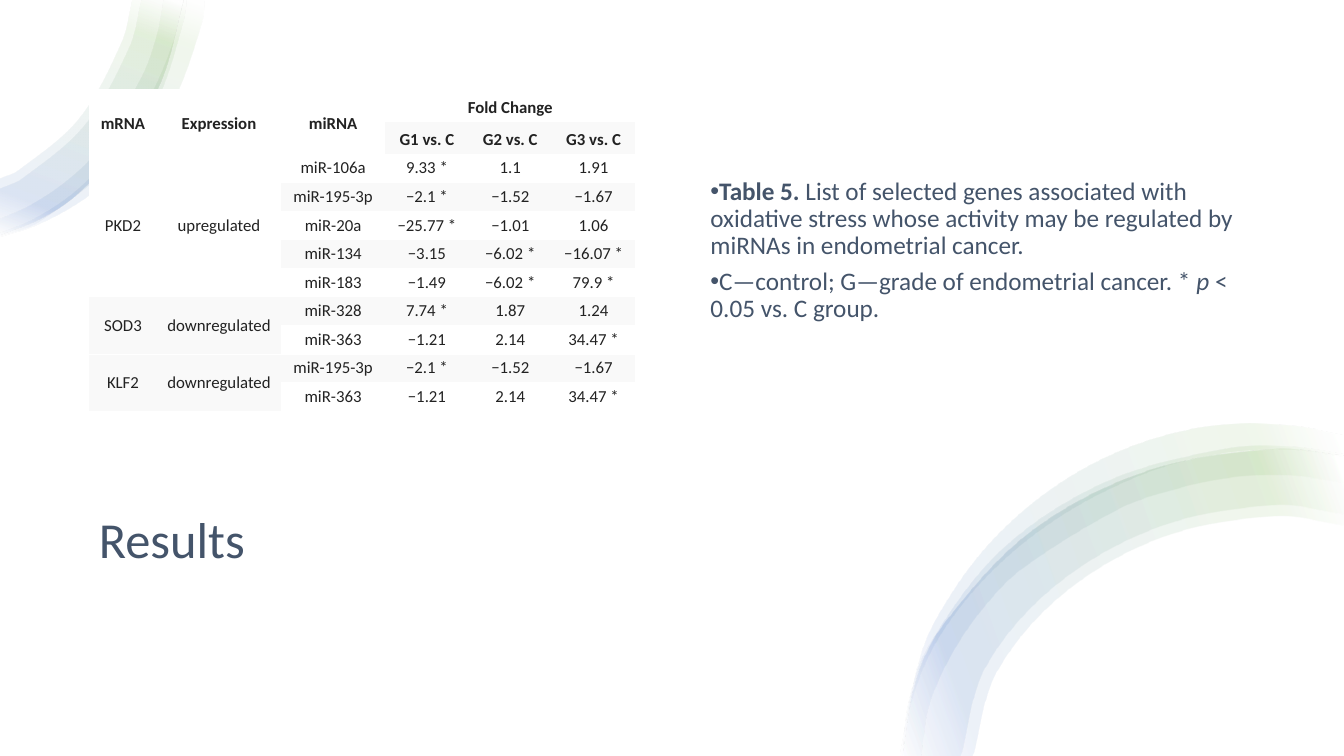
import math
import pptx
import pptx.dml.color
import pptx.enum.text
import pptx.enum.shapes
import pptx.oxml
import pptx.oxml.ns
import pptx.util

Cm, Pt = pptx.util.Cm, pptx.util.Pt
FONT = "Calibri"
SLATE, INK, WHITE, PALE = "44546A", "222222", "FFFFFF", "F9F9F9"
MIDDLE = pptx.enum.text.MSO_ANCHOR.MIDDLE
NAMESPACE = pptx.oxml.ns.nsdecls("a")


def colour(hex_code):
    return pptx.dml.color.RGBColor.from_string(hex_code)


def bezier_segments(knots):
    """Two control points and an end point for each step of a smooth curve."""
    ends = [knots[0], *knots, knots[-1]]
    segments = []
    for a, b, c, d in zip(ends, ends[1:], ends[2:], ends[3:]):
        reach = math.dist(b, c) / 3
        leave, arrive = reach / math.dist(a, c), reach / math.dist(b, d)
        segments.append([(b[0] + (c[0] - a[0]) * leave, b[1] + (c[1] - a[1]) * leave),
                         (c[0] - (d[0] - b[0]) * arrive, c[1] - (d[1] - b[1]) * arrive), c])
    return segments


deck = pptx.Presentation()
deck.slide_width, deck.slide_height = Cm(33.87), Cm(19.05)
slide = deck.slides.add_slide(deck.slide_layouts[1])

# Title
title = slide.shapes.title
title.left, title.top, title.width, title.height = Cm(2.24), Cm(11.79), Cm(29.39), Cm(3.76)
title.text_frame.text = "Results"
title.text_frame.vertical_anchor = MIDDLE
heading = title.text_frame.paragraphs[0]
heading.alignment = pptx.enum.text.PP_ALIGN.LEFT
heading.line_spacing = 0.9
heading.font.size, heading.font.name = Pt(36), FONT
heading.font.color.rgb = colour(SLATE)

# White backdrop behind everything
backdrop = slide.shapes.add_shape(pptx.enum.shapes.MSO_SHAPE.RECTANGLE, 0, 0,
                                  deck.slide_width, deck.slide_height)
backdrop.shadow.inherit = False
backdrop.fill.solid()
backdrop.fill.fore_color.rgb = colour(WHITE)
backdrop.line.fill.background()
title._element.addprevious(backdrop._element)

# Translucent rings in two corners: outer edge, inner edge (in units of 2.54 cm)
corner_edge = [(0, 2.33), (0.4, 2.17), (0.75, 1.94), (1.24, 1.42), (1.6, 0.8), (1.82, 0)]
corner_rings = [
    ([(0, 2.35), (0.35, 2.24), (0.77, 2.02), (1.15, 1.73), (1.49, 1.37), (1.75, 0.95),
      (2, 0.24), (2.03, 0)],
     [(1.82, 0), (1.72, 0.41), (1.55, 0.84), (1.33, 1.25), (1.04, 1.61), (0.71, 1.93),
      (0.32, 2.18), (0, 2.31)]),
    (corner_edge, [(1.31, 0), (1.2, 0.43), (0.78, 1.18), (0.18, 1.69), (0, 1.77)]),
    ([(0, 2.34), (0.37, 2.21), (1.1, 1.65), (1.38, 1.29), (1.61, 0.88), (1.82, 0.2),
      (1.85, 0)],
     [(1.62, 0), (1.55, 0.36), (1.4, 0.77), (0.95, 1.51), (0.64, 1.81), (0.29, 2.04),
      (0, 2.17)]),
    (corner_edge, [(1.4, 0), (1.28, 0.47), (0.84, 1.24), (0.22, 1.77), (0, 1.87)]),
]
sweep_edge = [(8.95, 7.5), (9.1, 6.7), (9.39, 6.15), (10.24, 5.26), (11.38, 4.67),
              (12.65, 4.45), (13.33, 4.52)]
sweep_rings = [
    (sweep_edge, [(13.33, 5.21), (12.65, 5.12), (11.55, 5.32), (10.57, 5.87),
                  (9.89, 6.66), (9.65, 7.5)]),
    (sweep_edge, [(13.33, 5.1), (12.65, 5.01), (11.51, 5.22), (10.49, 5.79),
                  (9.78, 6.61), (9.53, 7.5)]),
    ([(8.95, 7.5), (9.01, 6.98), (9.21, 6.41), (9.94, 5.45), (10.97, 4.78),
      (12.17, 4.45), (12.8, 4.43), (13.33, 4.51)],
     [(13.33, 4.79), (12.79, 4.72), (12.21, 4.74), (11.64, 4.86), (11.1, 5.05),
      (10.13, 5.65), (9.74, 6.05), (9.43, 6.51), (9.21, 7.02), (9.14, 7.5)]),
    ([(8.93, 7.5), (9.16, 6.44), (9.45, 5.88), (9.83, 5.38), (10.31, 4.94),
      (10.86, 4.59), (11.48, 4.34), (12.14, 4.21), (12.81, 4.22), (13.33, 4.32)],
     [(13.33, 4.53), (12.79, 4.46), (12.18, 4.49), (11.58, 4.62), (11.01, 4.85),
      (10.48, 5.15), (10, 5.52), (9.58, 5.96), (9.24, 6.47), (9.03, 7.04), (8.97, 7.5)]),
]
stops = "".join(
    f'<a:gs pos="{percent * 1000}"><a:srgbClr val="{tint}"><a:alpha val="10000"/>'
    '</a:srgbClr></a:gs>'
    for percent, tint in [(2, WHITE), (16, "70AD47"), (85, "4472C4"), (100, WHITE)])
for rings, angle in [(corner_rings, 110), (sweep_rings, 160)]:
    for outer, inner in rings:
        outline = [(round(x * 1000), round(y * 1000)) for x, y in outer + inner]
        left, top = (min(values) for values in zip(*outline))
        builder = slide.shapes.build_freeform(*outline[0], scale=Cm(2.54) / 1000)
        builder.add_line_segments(outline[1:], close=True)
        ring = builder.convert_to_shape()
        ring.shadow.inherit = False
        ring.line.fill.background()
        geometry = ring._element.spPr.find(pptx.oxml.ns.qn("a:custGeom"))
        # Bend both edges; the straight end between them stays a line
        sides = list(geometry.iter(pptx.oxml.ns.qn("a:lnTo")))
        split = len(outer)
        bends = (bezier_segments(outline[:split]) + [None]
                 + bezier_segments(outline[split:]))
        for side, bend in zip(sides, bends):
            if bend:
                points = "".join(f'<a:pt x="{round(x - left)}" y="{round(y - top)}"/>'
                                 for x, y in bend)
                side.getparent().replace(side, pptx.oxml.parse_xml(
                    f'<a:cubicBezTo {NAMESPACE}>{points}</a:cubicBezTo>'))
        geometry.addnext(pptx.oxml.parse_xml(
            f'<a:gradFill {NAMESPACE} rotWithShape="1"><a:gsLst>{stops}</a:gsLst>'
            f'<a:lin ang="{angle * 60000}" scaled="0"/></a:gradFill>'))

# Table caption and legend
caption = slide.placeholders[1]
caption.left, caption.top, caption.width, caption.height = Cm(17.65), Cm(1.83), Cm(13.97), Cm(8.97)
caption.text_frame.vertical_anchor = MIDDLE
caption.text_frame.auto_size = pptx.enum.text.MSO_AUTO_SIZE.NONE
notes = [
    [("Table 5.", True, False),
     (" List of selected genes associated with oxidative stress whose activity may be "
      "regulated by miRNAs in endometrial cancer.", False, False)],
    [("C—control; G—grade of endometrial cancer. * ", False, False),
     ("p", False, True), (" < 0.05 vs. C group.", False, False)],
]
for index, pieces in enumerate(notes):
    note = caption.text_frame.paragraphs[0] if index == 0 else caption.text_frame.add_paragraph()
    note.line_spacing, note.space_before, note.space_after = 0.9, Pt(0), Pt(6)
    note.font.size, note.font.name = Pt(18), FONT
    note.font.color.rgb = colour(SLATE)
    bullet = note._p.get_or_add_pPr()
    bullet.set("marL", "0")
    bullet.set("indent", str(-Cm(0.64)))
    for words, bold, italic in pieces:
        run = note.add_run()
        run.text, run.font.bold, run.font.italic = words, bold, italic

# Fold change table; None marks a cell covered by a merge
rows = [
    ("mRNA", "Expression", "miRNA", "Fold Change", None, None),
    (None, None, None, "G1 vs. C", "G2 vs. C", "G3 vs. C"),
    ("PKD2", "upregulated", "miR-106a", "9.33 *", "1.1", "1.91"),
    (None, None, "miR-195-3p", "−2.1 *", "−1.52", "−1.67"),
    (None, None, "miR-20a", "−25.77 *", "−1.01", "1.06"),
    (None, None, "miR-134", "−3.15", "−6.02 *", "−16.07 *"),
    (None, None, "miR-183", "−1.49", "−6.02 *", "79.9 *"),
    ("SOD3", "downregulated", "miR-328", "7.74 *", "1.87", "1.24"),
    (None, None, "miR-363", "−1.21", "2.14", "34.47 *"),
    ("KLF2", "downregulated", "miR-195-3p", "−2.1 *", "−1.52", "−1.67"),
    (None, None, "miR-363", "−1.21", "2.14", "34.47 *"),
]
fold_changes = slide.shapes.add_table(len(rows), 6, Cm(2.24), Cm(2.26), Cm(13.77), Cm(8.13)).table
fold_changes.first_row = fold_changes.horz_banding = False
for column, width in zip(fold_changes.columns, [1.72, 3.12, 2.63, 2.1, 2.1, 2.1]):
    column.width = Cm(width)

white_line = f'<a:solidFill><a:srgbClr val="{WHITE}"/></a:solidFill>'
borders = [("L", "<a:noFill/>"), ("R", "<a:noFill/>"), ("T", white_line), ("B", white_line)]
for r, values in enumerate(rows):
    header = r < 2
    fold_changes.rows[r].height = Cm(0.81 if header else 0.72)
    for c, value in enumerate(values):
        cell = fold_changes.cell(r, c)
        cell.fill.solid()
        cell.fill.fore_color.rgb = colour(PALE if r % 2 else WHITE)
        cell.vertical_anchor = MIDDLE
        cell.margin_left = cell.margin_right = Cm(0.13)
        cell.margin_top, cell.margin_bottom = Cm(0.17 if header else 0.08), Cm(0.08)
        for place, (edge, paint) in enumerate(borders):
            cell._tc.get_or_add_tcPr().insert(place, pptx.oxml.parse_xml(
                f'<a:ln{edge} {NAMESPACE} w="{Pt(0.75)}">{paint}</a:ln{edge}>'))
        if value is None:
            continue
        cell.text = value
        entry = cell.text_frame.paragraphs[0]
        entry.alignment = pptx.enum.text.PP_ALIGN.CENTER
        entry.font.size, entry.font.name, entry.font.bold = Pt(12), FONT, header
        entry.font.color.rgb = colour(INK)

fold_changes.cell(0, 3).merge(fold_changes.cell(0, 5))
for top, bottom, columns in [(0, 1, 3), (2, 6, 2), (7, 8, 2), (9, 10, 2)]:
    for c in range(columns):
        fold_changes.cell(top, c).merge(fold_changes.cell(bottom, c))

deck.save("out.pptx")
